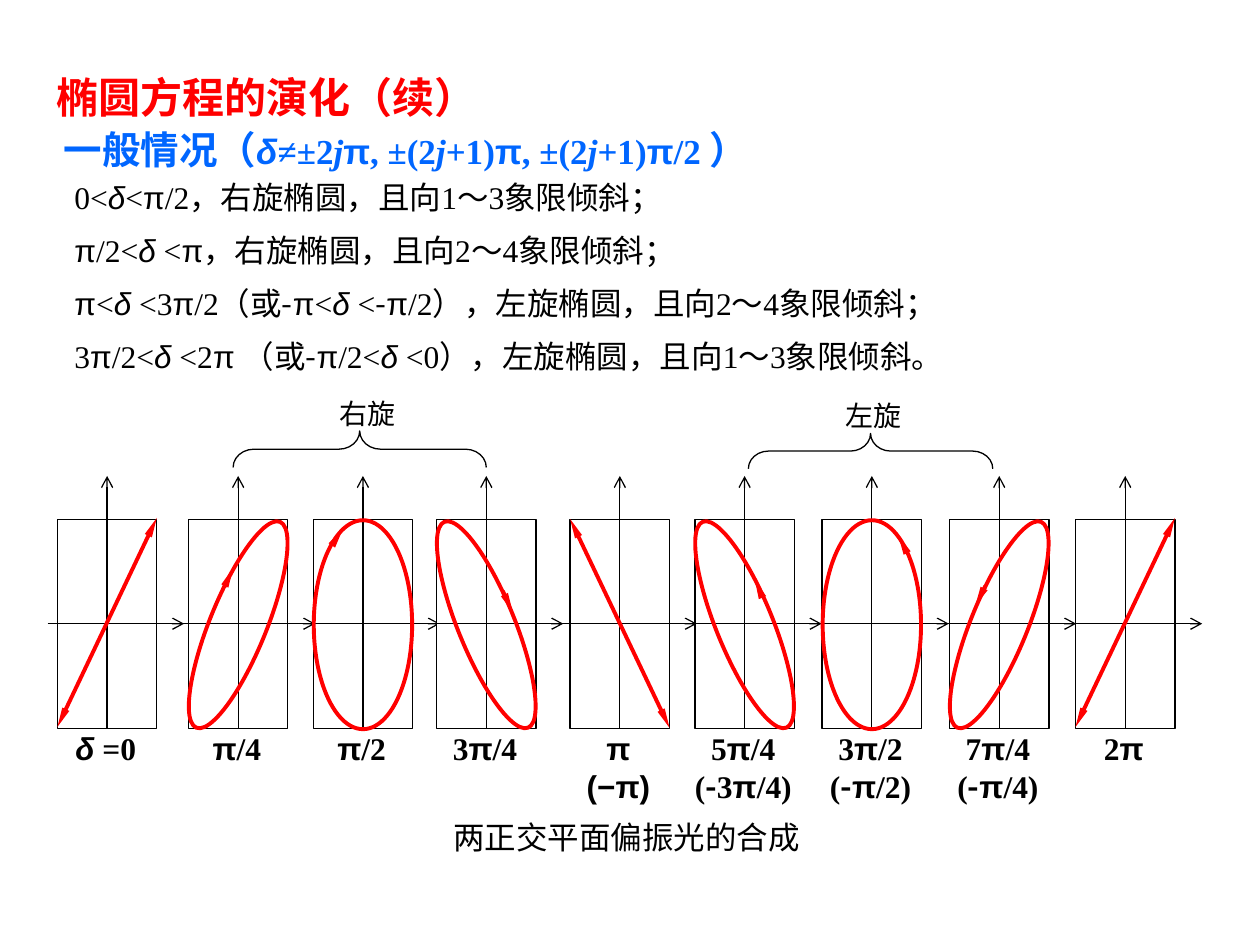
from dataclasses import dataclass
from itertools import groupby
from typing import NamedTuple, Optional

from lxml.etree import SubElement
from pptx import Presentation
from pptx.dml.color import RGBColor as Rgb
from pptx.enum.shapes import MSO_CONNECTOR as Link, MSO_SHAPE as Form
from pptx.enum.text import MSO_ANCHOR as Anchor, MSO_AUTO_SIZE as Fit, PP_ALIGN as Align
from pptx.oxml.ns import qn
from pptx.util import Pt


@dataclass(frozen=True)
class Theme:
    red: Rgb = Rgb(0xFF, 0, 0)
    blue: Rgb = Rgb(0, 0x66, 0xFF)
    ink: Rgb = Rgb(0, 0, 0)
    paper: Rgb = Rgb(0xFF, 0xFF, 0xFF)
    han: str = "Noto Sans CJK SC"
    greek: str = "Arial"
    latin: str = "Times New Roman"
    title: float = 24
    head: float = 22
    math: float = 20
    body: float = 18
    note: float = 16
    thin: float = 0.75
    thick: float = 2.25


class Box(NamedTuple):
    left: float
    top: float
    width: float
    height: float


class Style(NamedTuple):
    size: float
    color: Rgb
    bold: bool = False
    align: Align = Align.LEFT
    han: Optional[float] = None
    face: Optional[str] = None


class Mark(NamedTuple):
    dx: float
    y: float
    end_dx: float
    end_y: float


class Panel(NamedTuple):
    x: float
    label: str
    turn: Optional[float]
    mark: Mark
    face: Optional[str] = None


class Brace(NamedTuple):
    label: str
    name: Box
    curl: Box


LOOK = Theme()
TOP, BASE, MID = 296.9, 416.4, 356.4
HALF = 28.4
TILT = 22.1
RISE = Mark(-HALF, 415.4, HALF, 296)
FALL = Mark(HALF, 415.9, -HALF, 296.6)

PANELS = [
    Panel(61.2, "δ =0", None, RISE),
    Panel(136.1, "π/4", TILT, Mark(-7.9, 335.5, -2.9, 324.7)),
    Panel(207.4, "π/2", 0, Mark(-17.3, 311, -11.5, 302.4)),
    Panel(277.9, "3π/4", -TILT, Mark(9.4, 337.7, 15.1, 349.9)),
    Panel(354.2, "π\n(−π)", None, FALL, LOOK.greek),
    Panel(425.5, "5π/4\n(-3π/4)", -TILT, Mark(10.1, 341.3, 5.8, 331.2)),
    Panel(498.2, "3π/2\n(-π/2)", 0, Mark(20.2, 316.1, 15.1, 306)),
    Panel(571, "7π/4\n(-π/4)", TILT, Mark(-7.9, 334.8, -13.7, 346.3)),
    Panel(643, "2π", None, RISE),
]
BRACES = [
    Brace("右旋", Box(185.8, 226.8, 48.2, 23), Box(195.1, 184.3, 20.9, 144.7)),
    Brace("左旋", Box(475.2, 227.5, 48.2, 23), Box(487.4, 187.9, 20.2, 139.7)),
]
RULES = [
    "0<δ<π/2，右旋椭圆，且向1～3象限倾斜；",
    "π/2<δ <π，右旋椭圆，且向2～4象限倾斜；",
    "π<δ <3π/2（或-π<δ <-π/2），左旋椭圆，且向2～4象限倾斜；",
    "3π/2<δ <2π （或-π/2<δ <0），左旋椭圆，且向1～3象限倾斜。",
]


def put(item, **values) -> None:
    for key, value in values.items():
        setattr(item, key, value)


def place(box: Box) -> list:
    return [Pt(side) for side in box]


def kind(char: str) -> tuple:
    if char in "πδ":
        return LOOK.greek, char == "δ"
    if char == "-" or (ord(char) > 0x2FFF and char != "～"):
        return LOOK.han, False
    return LOOK.latin, char == "j"


def write(frame, text: str, style: Style, inset: bool = False, anchor=Anchor.TOP) -> None:
    put(frame, word_wrap=True, auto_size=Fit.NONE, vertical_anchor=anchor)
    if not inset:
        sides = ("left", "right", "top", "bottom")
        put(frame, **{f"margin_{side}": 0 for side in sides})
    for i, line in enumerate(text.split("\n")):
        para = frame.add_paragraph() if i else frame.paragraphs[0]
        para.alignment = style.align
        for (face, slant), chars in groupby(line, kind):
            run = para.add_run()
            run.text = "".join(chars)
            size = style.han if style.han and face == LOOK.han else style.size
            put(run.font, name=style.face or face, size=Pt(size), bold=style.bold, italic=slant)
            run.font.color.rgb = style.color
            SubElement(run.font._element, qn("a:ea"), typeface=LOOK.han)


def label(slide, box: Box, text: str, style: Style, **extra) -> None:
    write(slide.shapes.add_textbox(*place(box)).text_frame, text, style, **extra)


def shape(slide, form: Form, box: Box, color: Rgb, width: float, turn: float = 0, fill=None):
    item = slide.shapes.add_shape(form, *place(box))
    put(item, rotation=turn)
    put(item.line, width=Pt(width))
    put(item.shadow, inherit=False)
    item.line.color.rgb = color
    if fill is None:
        item.fill.background()
    else:
        item.fill.solid()
        item.fill.fore_color.rgb = fill
    return item


def arrow(slide, x: float, way: Mark, color: Rgb, width: float, tips: dict) -> None:
    ends = (x + way.dx, way.y, x + way.end_dx, way.end_y)
    link = slide.shapes.add_connector(Link.STRAIGHT, *map(Pt, ends))
    put(link.line, width=Pt(width))
    link.line.color.rgb = color
    stroke = link.line._get_or_add_ln()
    for end, tip in tips.items():
        SubElement(stroke, qn(f"a:{end}"), tip)
    SubElement(link._element.spPr, qn("a:effectLst"))


def panel(slide, item: Panel) -> None:
    x = item.x
    frame = Box(x - HALF, TOP, 2 * HALF, BASE - TOP)
    shape(slide, Form.RECTANGLE, frame, LOOK.ink, LOOK.thin, fill=LOOK.paper)
    for axis in (Mark(-34, MID, 44, MID), Mark(0, BASE, 0, 272)):
        arrow(slide, x, axis, LOOK.ink, LOOK.thin, {"tailEnd": {"type": "arrow"}})
    tip = {"type": "triangle", "w": "sm", "len": "lg"}
    tips = {"tailEnd": tip}
    if item.turn is None:
        tips = {"headEnd": tip, "tailEnd": tip}
    else:
        wide, high = (32.4, 127) if item.turn else (56.2, 119.4)
        oval = Box(x - wide / 2, MID + 0.6 - high / 2, wide, high)
        shape(slide, Form.OVAL, oval, LOOK.red, LOOK.thick, item.turn)
    arrow(slide, x, item.mark, LOOK.red, LOOK.thick, tips)
    style = Style(LOOK.body, LOOK.ink, True, Align.CENTER, face=item.face)
    label(slide, Box(x - 34, BASE, 66.5, 49), item.label, style)


def main() -> None:
    deck = Presentation()
    put(deck, slide_width=Pt(720), slide_height=Pt(540))
    slide = deck.slides.add_slide(deck.slide_layouts[5])
    title = slide.shapes.title
    put(title, **dict(zip(Box._fields, place(Box(25.2, 37.4, 573, 36)))))
    style = Style(LOOK.title, LOOK.red, True)
    write(title.text_frame, "椭圆方程的演化（续）", style, inset=True)
    label(slide, Box(29.5, 68.4, 460.8, 33.8), "一般情况（δ≠±2jπ, ±(2j+1)π, ±(2j+1)π/2 ）",
          Style(LOOK.math, LOOK.blue, True, han=LOOK.head), inset=True)
    for i, rule in enumerate(RULES):
        label(slide, Box(42.5, 102 + 30.2 * i, 616, 32), rule, Style(LOOK.body, LOOK.ink))
    for brace in BRACES:
        label(slide, brace.name, brace.label, Style(LOOK.note, LOOK.ink, align=Align.CENTER))
        curl = shape(slide, Form.RIGHT_BRACE, brace.curl, LOOK.ink, LOOK.thin, 270)
        curl.adjustments[0] = 0.57
    for item in PANELS:
        panel(slide, item)
    label(slide, Box(153.4, 468, 409, 20.2), "两正交平面偏振光的合成",
          Style(LOOK.body, LOOK.ink, align=Align.CENTER), anchor=Anchor.MIDDLE)
    deck.save("out.pptx")


if __name__ == "__main__":
    main()
